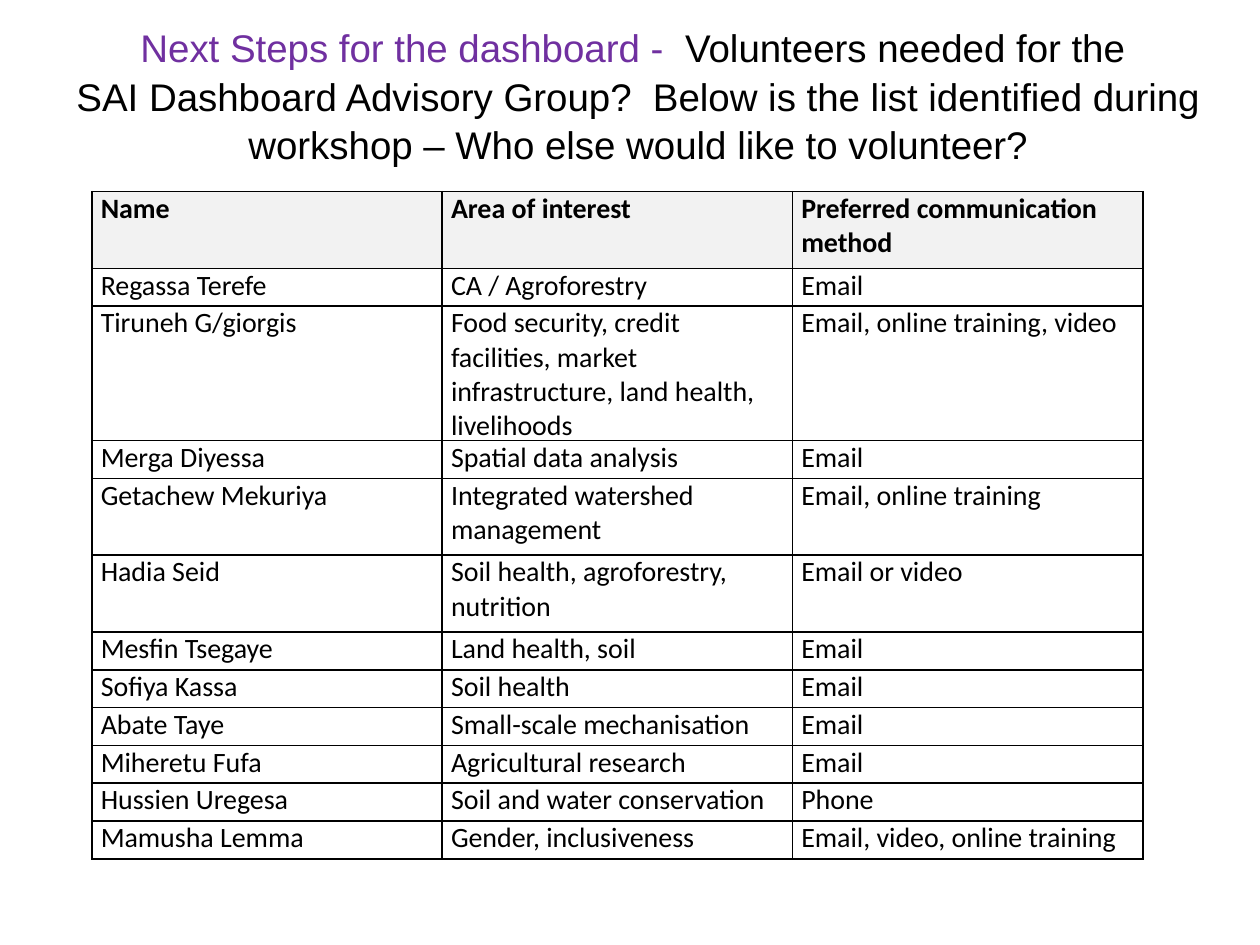
from lxml.etree import SubElement
from pptx import Presentation
from pptx.dml.color import RGBColor
from pptx.enum.text import MSO_ANCHOR, PP_ALIGN
from pptx.oxml.ns import qn
from pptx.util import Inches, Pt

PURPLE = RGBColor(0x70, 0x30, 0xA0)
BLACK = RGBColor(0, 0, 0)
WHITE = RGBColor(0xFF, 0xFF, 0xFF)
HEADER_GREY = RGBColor(0xF2, 0xF2, 0xF2)

# Table grid: equal columns, rows one, two or three lines tall
COLUMN_WIDTH = 2.78
LINE_HEIGHT = 0.3
ROW_HEIGHTS = {1: LINE_HEIGHT, 2: 0.61, 3: 0.91}

HEADER = ("Name", "Area of interest", "Preferred communication method")
VOLUNTEERS = [
    ("Regassa Terefe", "CA / Agroforestry", "Email"),
    ("Tiruneh G/giorgis",
     "Food security, credit facilities, market infrastructure, land health, livelihoods",
     "Email, online training, video"),
    ("Merga Diyessa", "Spatial data analysis", "Email"),
    ("Getachew Mekuriya", "Integrated watershed management", "Email, online training"),
    ("Hadia Seid", "Soil health, agroforestry, nutrition", "Email or video"),
    ("Mesfin Tsegaye", "Land health, soil", "Email"),
    ("Sofiya Kassa", "Soil health", "Email"),
    ("Abate Taye", "Small-scale mechanisation", "Email"),
    ("Miheretu Fufa", "Agricultural research", "Email"),
    ("Hussien Uregesa", "Soil and water conservation", "Phone"),
    ("Mamusha Lemma", "Gender, inclusiveness", "Email, video, online training"),
]
ROW_LINES = [2, 1, 3, 1, 2, 2] + [1] * 6


def add_span(para, text, font, size, color, bold=False):
    span = para.add_run()
    span.text = text
    span.font.name = font
    span.font.size = Pt(size)
    span.font.bold = bold
    span.font.color.rgb = color


def add_title(page):
    box = page.shapes.add_textbox(Inches(0.44), Inches(0.25), Inches(9.25), Inches(1))
    frame = box.text_frame
    frame.word_wrap = True
    frame.vertical_anchor = MSO_ANCHOR.MIDDLE
    para = frame.paragraphs[0]
    para.alignment = PP_ALIGN.CENTER
    para.line_spacing = 1.05
    add_span(para, "Next Steps for the dashboard -  ", "Arial", 22, PURPLE)
    add_span(para, "Volunteers needed for the ", "Arial", 22, BLACK)
    para.add_line_break()
    add_span(para, "SAI Dashboard Advisory Group?  Below is the list identified during "
             "workshop – Who else would like to volunteer?", "Arial", 22, BLACK)


def add_borders(cell):
    properties = cell._tc.get_or_add_tcPr()
    for position, side in enumerate(("lnL", "lnR", "lnT", "lnB")):
        line = SubElement(properties, qn(f"a:{side}"), w=str(Pt(1)))
        fill = SubElement(line, qn("a:solidFill"))
        SubElement(fill, qn("a:srgbClr"), val=str(BLACK))
        properties.insert(position, line)  # borders come before the fill


def fill_cell(cell, text, is_header):
    cell.margin_left = cell.margin_right = Inches(0.07)
    cell.margin_top = cell.margin_bottom = 0
    cell.fill.solid()
    cell.fill.fore_color.rgb = HEADER_GREY if is_header else WHITE
    add_span(cell.text_frame.paragraphs[0], text, "Calibri", 16, BLACK, is_header)
    add_borders(cell)


def add_volunteer_table(page):
    rows = [HEADER] + VOLUNTEERS
    heights = [ROW_HEIGHTS[lines] for lines in ROW_LINES]
    table = page.shapes.add_table(
        len(rows), len(HEADER), Inches(0.73), Inches(1.52),
        Inches(COLUMN_WIDTH * len(HEADER)), Inches(sum(heights))).table
    for column in table.columns:
        column.width = Inches(COLUMN_WIDTH)
    for row_index, (texts, height) in enumerate(zip(rows, heights)):
        table.rows[row_index].height = Inches(height)
        for column_index, text in enumerate(texts):
            fill_cell(table.cell(row_index, column_index), text, row_index == 0)


def main():
    deck = Presentation()
    deck.slide_width, deck.slide_height = Inches(10), Inches(7.5)
    page = deck.slides.add_slide(deck.slide_layouts[6])
    add_title(page)
    add_volunteer_table(page)
    deck.save("out.pptx")


if __name__ == "__main__":
    main()
